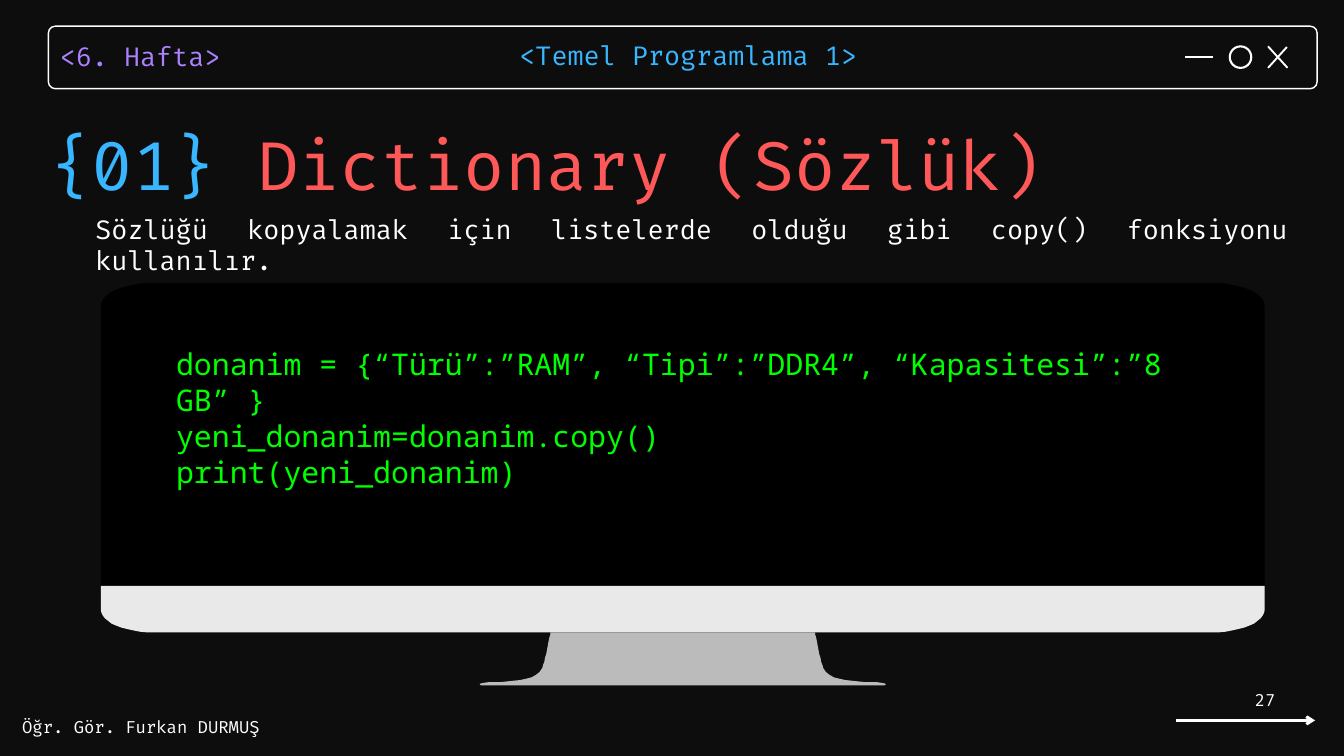
"""Builds the slide on copying a dictionary, with its window bar and monitor."""
from dataclasses import dataclass
from typing import Any, NamedTuple, Optional

from lxml.etree import SubElement
from pptx import Presentation
from pptx.dml.color import RGBColor as RGB
from pptx.enum.shapes import MSO_CONNECTOR as Conn, MSO_SHAPE as Kind
from pptx.enum.text import MSO_ANCHOR as Anchor, MSO_AUTO_SIZE as Auto, PP_ALIGN as Align
from pptx.oxml.ns import qn
from pptx.util import Pt

UNIT = 9144
MID = 1016

Point = tuple[float, float]
Box = tuple[int, int, int, int]


@dataclass(frozen=True)
class Theme:
    """Colours, fonts and type sizes of the slide."""
    back: str = "0D0D0D"
    white: str = "FFFFFF"
    black: str = "000000"
    blue: str = "38B6FF"
    red: str = "FF5858"
    violet: str = "AB81FF"
    green: str = "00FF00"
    chin: str = "E9E9E9"
    stand: str = "BBBBBB"
    font: str = "Fira Code"
    mono: str = "Noto Sans Mono"
    title: int = 72
    code: int = 32
    body: int = 28
    small: int = 18


LOOK = Theme()


class Run(NamedTuple):
    """A piece of text in one colour."""
    text: str
    color: str = LOOK.white


class Label(NamedTuple):
    """A block of text with its place and format."""
    box: Box
    paras: list[list[Run]]
    size: int = LOOK.body
    font: str = LOOK.font
    lead: Optional[float] = None
    align: Align = Align.LEFT
    anchor: Anchor = Anchor.TOP
    inset: int = 0


class Rule(NamedTuple):
    """A straight line, with or without an arrowhead."""
    start: tuple[int, int]
    end: tuple[int, int]
    width: float = 2
    arrow: bool = False


class Form(NamedTuple):
    """A preset shape with its fill and line."""
    kind: Kind
    box: Box
    width: float
    line: str = LOOK.white
    fill: Optional[str] = None
    round: Optional[float] = None


class Part(NamedTuple):
    """The left half of a symmetric outline."""
    half: list[Point]
    fill: str


def px(*vals: float) -> list[int]:
    """Turn px into EMU."""
    return [round(val * UNIT) for val in vals]


def apply(item: Any, vals: dict[str, Any]) -> None:
    """Set each named value on an item."""
    for name, val in vals.items():
        setattr(item, name, val)


def curve(*pts: Point, steps: int = 12) -> list[Point]:
    """Sample a cubic curve from its four points."""
    out = []
    for i in range(steps + 1):
        t = i / steps
        mix = ((1 - t) ** 3, 3 * t * (1 - t) ** 2, 3 * t * t * (1 - t), t ** 3)
        out.append((sum(m * p[0] for m, p in zip(mix, pts)),
                    sum(m * p[1] for m, p in zip(mix, pts))))
    return out


def write(shape: Any, label: Label) -> None:
    """Place a text shape and fill it with formatted runs."""
    apply(shape, dict(zip(("left", "top", "width", "height"), px(*label.box))))
    frame = shape.text_frame
    sides = ("margin_left", "margin_top", "margin_right", "margin_bottom")
    apply(frame, {"word_wrap": True, "auto_size": Auto.NONE,
                  "vertical_anchor": label.anchor,
                  **dict.fromkeys(sides, px(label.inset)[0])})
    for i, runs in enumerate(label.paras):
        para = frame.add_paragraph() if i else frame.paragraphs[0]
        para.alignment = label.align
        if label.lead:
            para.line_spacing = Pt(label.lead)
        for piece in runs:
            run = para.add_run()
            run.text = piece.text
            apply(run.font, {"size": Pt(label.size), "name": label.font})
            run.font.color.rgb = RGB.from_string(piece.color)


def rule(shapes: Any, item: Rule) -> None:
    """Draw a line."""
    line = shapes.add_connector(Conn.STRAIGHT, *px(*item.start, *item.end))
    line.line.width = Pt(item.width)
    line.line.color.rgb = RGB.from_string(LOOK.white)
    if item.arrow:
        SubElement(line.line._get_or_add_ln(), qn("a:tailEnd"), type="arrow")
    SubElement(line._element.spPr, qn("a:effectLst"))


def form(shapes: Any, item: Form) -> None:
    """Draw a preset shape."""
    shape = shapes.add_shape(item.kind, *px(*item.box))
    shape.shadow.inherit = False
    if item.round is not None:
        shape.adjustments[0] = item.round
    if item.fill:
        shape.fill.solid()
        shape.fill.fore_color.rgb = RGB.from_string(item.fill)
    else:
        shape.fill.background()
    shape.line.width = Pt(item.width)
    shape.line.color.rgb = RGB.from_string(item.line)


def part(shapes: Any, item: Part) -> None:
    """Draw a half outline together with its mirror image."""
    pts = item.half + [(2 * MID - x, y) for x, y in reversed(item.half)]
    pen = shapes.build_freeform(*pts[0], scale=UNIT)
    pen.add_line_segments(pts[1:], close=True)
    shape = pen.convert_to_shape()
    shape.shadow.inherit = False
    shape.fill.solid()
    shape.fill.fore_color.rgb = RGB.from_string(item.fill)
    shape.line.fill.background()


HEAD = Label((75, 161, 1925, 141),
             [[Run("{01} ", LOOK.blue), Run("Dictionary (Sözlük)", LOOK.red)]],
             LOOK.title, lead=102.6)
CODE = ["donanim = {“Türü”:”RAM”, “Tipi”:”DDR4”, “Kapasitesi”:”8 GB” }",
        "yeni_donanim=donanim.copy()", "print(yeni_donanim)"]
RULES = [Rule((1750, 1072), (1957, 1072), 3, True), Rule((1887, 69), (1916, 101)),
         Rule((1915, 70), (1887, 101)), Rule((1764, 85), (1805, 85))]
PARTS = [
    Part([(150, 872), *curve((150, 455), (150, 436), (185, 421), (229, 421))], LOOK.black),
    Part([(150, 872), *curve((150, 907), (150, 926), (185, 941), (229, 941))], LOOK.chin),
    Part([*curve((819, 941), (819, 941), (813, 978), (807, 994)),
          *curve((807, 994), (797, 1020), (734, 1012), (716, 1017)),
          *curve((716, 1017), (713, 1018), (715, 1020), (717, 1020))], LOOK.stand),
]
FORMS = [Form(Kind.ROUNDED_RECTANGLE, (72, 39, 1888, 93), 1.5, round=0.11),
         Form(Kind.OVAL, (1830, 69, 32, 32), 2.25),
         Form(Kind.RECTANGLE, (224, 447, 1592, 402), 2, LOOK.black, LOOK.black)]
LABELS = [
    Label((89, 52, 340, 53), [[Run("<6. Hafta>", LOOK.violet)]], lead=39.2),
    Label((773, 51, 529, 53), [[Run("<Temel Programlama 1>", LOOK.blue)]], lead=39.2),
    Label((33, 1067, 367, 30), [[Run("Öğr. Gör. Furkan DURMUŞ")]], LOOK.small),
    Label((142, 317, 1773, 47),
          [[Run("Sözlüğü kopyalamak için listelerde olduğu gibi copy() fonksiyonu kullanılır.")]],
          align=Align.JUSTIFY),
    Label((1675, 1021, 233, 40), [[Run("27")]], LOOK.small,
          align=Align.RIGHT, anchor=Anchor.MIDDLE, inset=10),
    Label((262, 515, 1516, 162), [[Run(row, LOOK.green)] for row in CODE],
          LOOK.code, LOOK.mono),
]


def main() -> None:
    """Build and save the slide."""
    deck = Presentation()
    deck.slide_width, deck.slide_height = px(2000, 1125)
    slide = deck.slides.add_slide(deck.slide_layouts[5])
    slide.background.fill.solid()
    slide.background.fill.fore_color.rgb = RGB.from_string(LOOK.back)
    shapes = slide.shapes
    write(shapes.title, HEAD)
    for draw, items in ((rule, RULES), (part, PARTS), (form, FORMS)):
        for item in items:
            draw(shapes, item)
    for label in LABELS:
        write(shapes.add_textbox(*px(*label.box)), label)
    deck.save("out.pptx")


if __name__ == "__main__":
    main()
